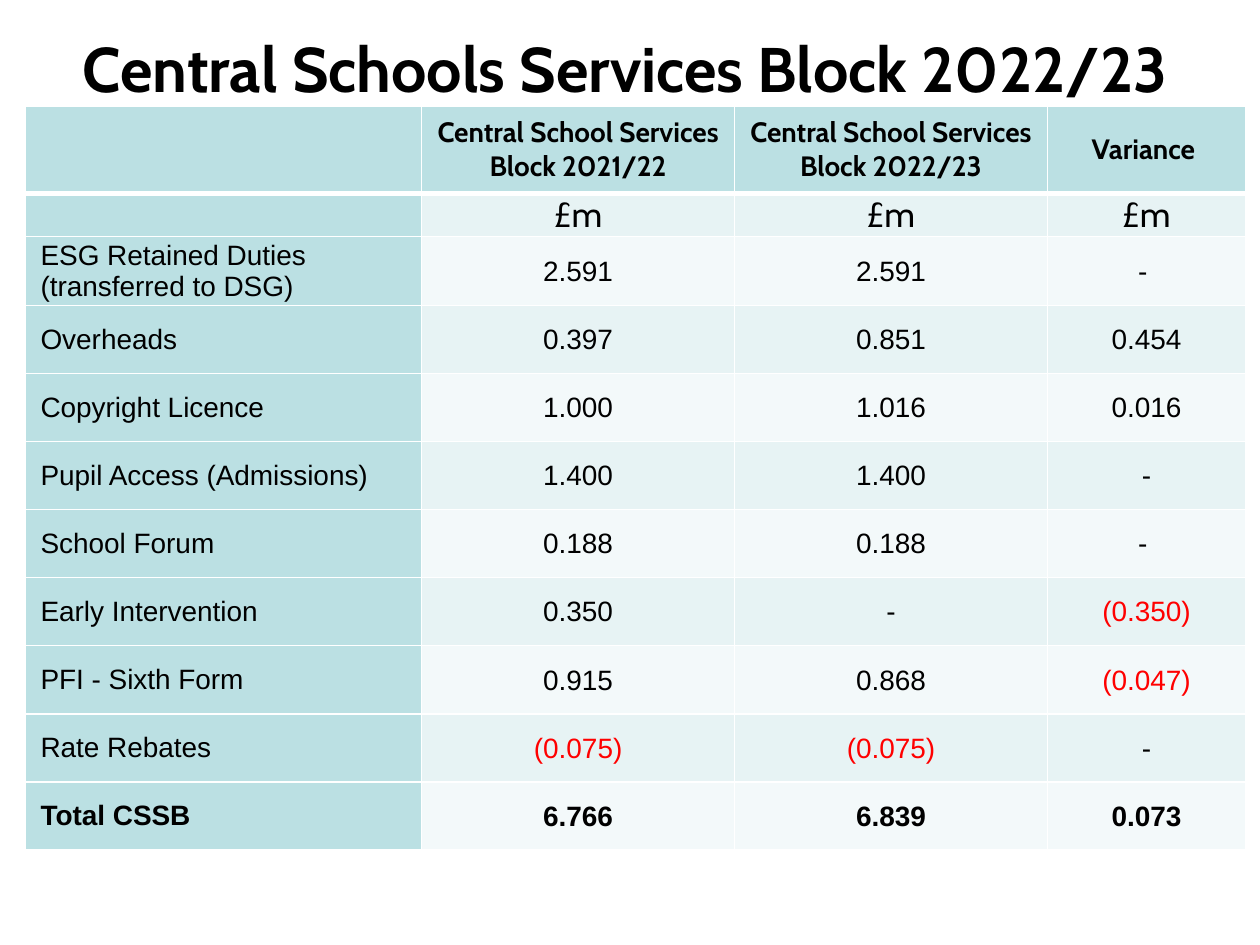
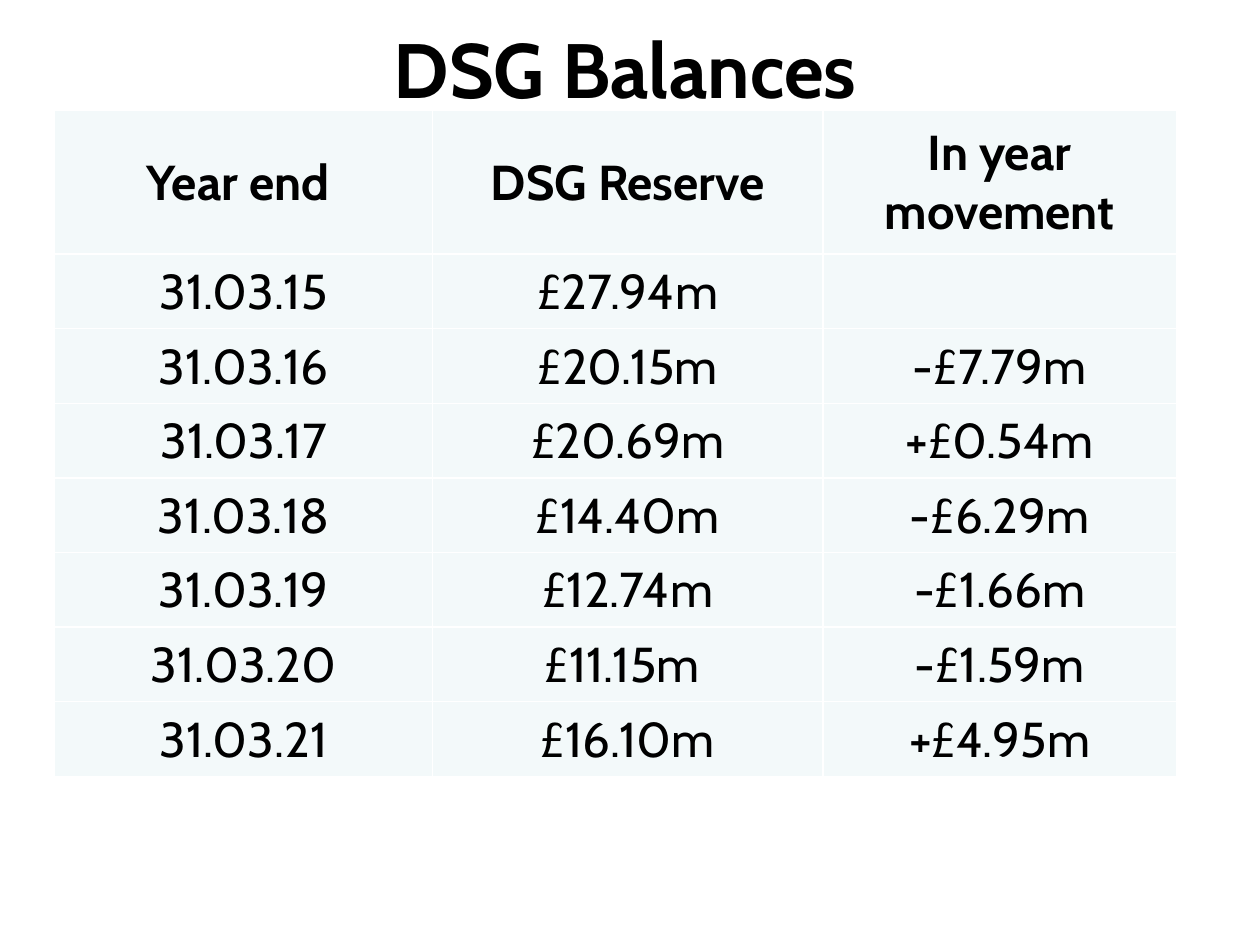
"""Build the Central Schools Services Block and DSG balances slides."""
from collections.abc import Callable
from dataclasses import dataclass

from lxml.etree import SubElement
from pptx import Presentation
from pptx.dml.color import RGBColor
from pptx.enum.text import MSO_ANCHOR, PP_ALIGN
from pptx.oxml.ns import qn
from pptx.slide import Slide
from pptx.table import _Cell
from pptx.util import Pt

BLACK = RGBColor(0x00, 0x00, 0x00)
WHITE = RGBColor(0xFF, 0xFF, 0xFF)
RED = RGBColor(0xFF, 0x00, 0x00)
TEAL = RGBColor(0xBB, 0xE0, 0xE3)
MIST = RGBColor(0xE7, 0xF3, 0xF4)
PALE = RGBColor(0xF3, 0xF9, 0xFA)
HEADING_FONT = "Cabin"
FIGURE_FONT = "Arial"
HAIRLINE = 1
HEADER_RULE = 3


@dataclass(frozen=True)
class Title:
    """Wording and vertical fit of a slide title."""

    text: str
    size: float
    height: float
    anchor: MSO_ANCHOR
    inset: float


@dataclass(frozen=True)
class CellStyle:
    """Look of one table cell, with insets as left, top, right, bottom."""

    fill: RGBColor
    font: str
    size: float
    bold: bool = False
    align: PP_ALIGN = PP_ALIGN.CENTER
    insets: tuple[float, float, float, float] = (0.7, 0.7, 0.7, 0)
    top_rule: float = HAIRLINE
    bottom_rule: float = HAIRLINE


@dataclass(frozen=True)
class Grid:
    """Place, measures, wording and styling rule of a table."""

    left: float
    top: float
    widths: list[float]
    heights: list[float]
    rows: list[list[str]]
    style: Callable[[int, int], CellStyle]


BLOCK_ROWS = [
    ["", "Central School Services Block 2021/22",
     "Central School Services Block 2022/23", "Variance "],
    ["", "£m", "£m", "£m"],
    ["ESG Retained Duties (transferred to DSG)", "2.591", "2.591", "- "],
    ["Overheads", "0.397", "0.851", "0.454"],
    ["Copyright Licence", "1.000", "1.016", "0.016"],
    ["Pupil Access (Admissions)", "1.400", "1.400", "-"],
    ["School Forum", "0.188", "0.188", "- "],
    ["Early Intervention", "0.350", "-", "(0.350)"],
    ["PFI - Sixth Form", "0.915", "0.868", "(0.047)"],
    ["Rate Rebates", "(0.075)", "(0.075)", "-"],
    ["Total CSSB", "6.766", "6.839", "0.073"],
]
BALANCE_ROWS = [
    ["Year end ", "DSG Reserve", "In year movement"],
    ["31.03.15", "£27.94m", ""],
    ["31.03.16", "£20.15m", "-£7.79m"],
    ["31.03.17", "£20.69m", "+£0.54m"],
    ["31.03.18", "£14.40m", "-£6.29m"],
    ["31.03.19", "£12.74m", "-£1.66m"],
    ["31.03.20", "£11.15m ", "-£1.59m"],
    ["31.03.21", "£16.10m", "+£4.95m"],
]


def block_style(row: int, column: int) -> CellStyle:
    """Style headings, units, labels and banded figures of the block table."""
    heading_insets = (5, 0, 5, 0)
    if row == 0:
        return CellStyle(TEAL, HEADING_FONT, 16, True, insets=heading_insets,
                         bottom_rule=HEADER_RULE)
    if row == 1:
        return CellStyle(MIST if column else TEAL, HEADING_FONT, 20,
                         insets=heading_insets, top_rule=HEADER_RULE)
    is_total = row == len(BLOCK_ROWS) - 1
    if column == 0:
        return CellStyle(TEAL, FIGURE_FONT, 16, is_total, PP_ALIGN.LEFT, (8.8, 0, 0, 0))
    return CellStyle(MIST if row % 2 else PALE, FIGURE_FONT, 16, is_total)


def balance_style(row: int, column: int) -> CellStyle:
    """Style the balances table, bold in its heading row only."""
    return CellStyle(PALE, HEADING_FONT, 28, row == 0)


def add_title(slide: Slide, title: Title) -> None:
    """Add the centred bold title."""
    heading = slide.shapes.add_textbox(Pt(19.4), Pt(15.1), Pt(676), Pt(title.height))
    frame = heading.text_frame
    frame.word_wrap = True
    frame.vertical_anchor = title.anchor
    frame.margin_top = frame.margin_bottom = Pt(title.inset)
    frame.text = title.text
    paragraph = frame.paragraphs[0]
    paragraph.alignment = PP_ALIGN.CENTER
    font = paragraph.runs[0].font
    font.name, font.size, font.bold = HEADING_FONT, Pt(title.size), True
    font.color.rgb = BLACK


def add_borders(cell: _Cell, style: CellStyle) -> None:
    """Draw the white rules round a cell."""
    properties = cell._tc.get_or_add_tcPr()
    rules = {"a:lnL": HAIRLINE, "a:lnR": HAIRLINE,
             "a:lnT": style.top_rule, "a:lnB": style.bottom_rule}
    for side, width in rules.items():
        line = SubElement(properties, qn(side), w=str(Pt(width)))
        SubElement(SubElement(line, qn("a:solidFill")), qn("a:srgbClr"), val=str(WHITE))


def fill_cell(cell: _Cell, text: str, style: CellStyle) -> None:
    """Write and format one cell."""
    add_borders(cell, style)
    cell.fill.solid()
    cell.fill.fore_color.rgb = style.fill
    cell.vertical_anchor = MSO_ANCHOR.MIDDLE
    (cell.margin_left, cell.margin_top,
     cell.margin_right, cell.margin_bottom) = map(Pt, style.insets)
    cell.text_frame.text = text
    paragraph = cell.text_frame.paragraphs[0]
    paragraph.alignment = style.align
    for run in paragraph.runs:
        run.font.name, run.font.size = style.font, Pt(style.size)
        run.font.bold = style.bold
        run.font.color.rgb = RED if text.startswith("(") else BLACK


def add_grid(slide: Slide, grid: Grid) -> None:
    """Add a table and fill it by its styling rule."""
    table = slide.shapes.add_table(
        len(grid.heights), len(grid.widths), Pt(grid.left), Pt(grid.top),
        Pt(sum(grid.widths)), Pt(sum(grid.heights))).table
    table.first_row = table.horz_banding = False
    for column, width in zip(table.columns, grid.widths):
        column.width = Pt(width)
    for row, height in zip(table.rows, grid.heights):
        row.height = Pt(height)
    for r, texts in enumerate(grid.rows):
        for c, text in enumerate(texts):
            fill_cell(table.cell(r, c), text, grid.style(r, c))


SLIDES = [
    (Title("Central Schools Services Block 2022/23", 36, 90.7, MSO_ANCHOR.TOP, 1.5),
     Grid(14.4, 60.5, [226.6, 178.8, 178.8, 113.3],
          [50.1, 24.6, 39.4] + [38.9] * 8, BLOCK_ROWS, block_style)),
    (Title("DSG Balances", 44, 47.5, MSO_ANCHOR.MIDDLE, 3.6),
     Grid(31.2, 62.8, [216, 223, 202], [82.4] + [42.65] * 7,
          BALANCE_ROWS, balance_style)),
]


def main() -> None:
    """Build and save the presentation."""
    presentation = Presentation()
    presentation.slide_width, presentation.slide_height = Pt(720), Pt(540)
    for title, grid in SLIDES:
        slide = presentation.slides.add_slide(presentation.slide_layouts[6])
        add_title(slide, title)
        add_grid(slide, grid)
    presentation.save("out.pptx")


if __name__ == "__main__":
    main()
